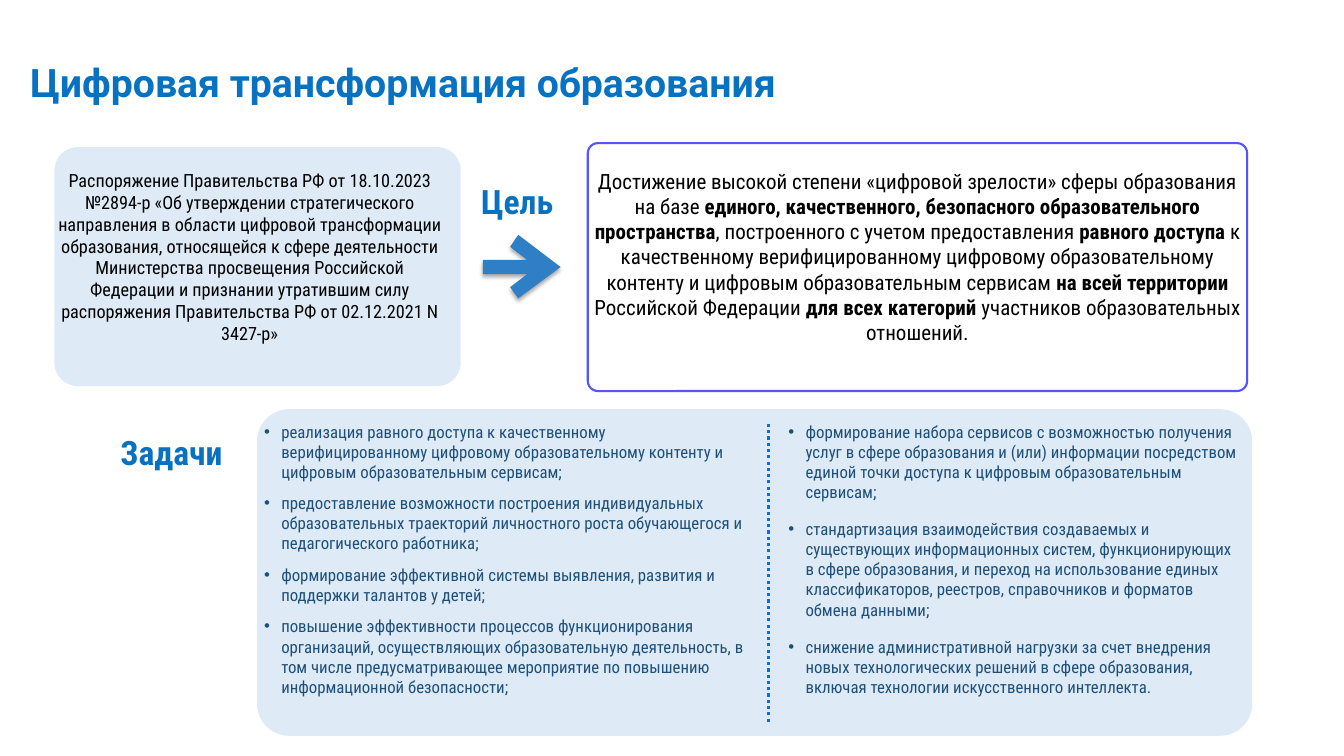
import pptx
import pptx.dml.color
import pptx.enum.dml
import pptx.enum.shapes
import pptx.enum.text
import pptx.oxml
import pptx.oxml.ns
import pptx.util
from pptx.util import Inches

COLORS = {
    "panel": "DEEBF7",
    "title": "0872C2",
    "divider": "036FE4",
    "white": "FFFFFF",
    "goal_border": "5256FC",
    "text": "000000",
    "task": "1E4F79",
    "label": "0971C0",
    "arrow": "2E7FC6",
}
NAMESPACE = pptx.oxml.ns.nsdecls("a")
ALIGN = pptx.enum.text.PP_ALIGN
rgb = pptx.dml.color.RGBColor.from_string

presentation = pptx.Presentation()
presentation.slide_width = Inches(13.33)
presentation.slide_height = Inches(7.5)
slide = presentation.slides.add_slide(presentation.slide_layouts[6])
shapes = slide.shapes


def add_panel(box, radius, fill):
    shape = shapes.add_shape(
        pptx.enum.shapes.MSO_SHAPE.ROUNDED_RECTANGLE, *map(Inches, box)
    )
    shape.adjustments[0] = radius
    shape.shadow.inherit = False
    shape.fill.solid()
    shape.fill.fore_color.rgb = rgb(COLORS[fill])
    shape.line.fill.background()
    return shape


def add_text(box, paragraphs, size, color, font="Roboto Condensed", bold=False,
             align=ALIGN.LEFT, inset=0.05, wrap=True, space=0, indent=0,
             bullet=False, anchor=pptx.enum.text.MSO_ANCHOR.TOP):
    frame = shapes.add_textbox(*map(Inches, box)).text_frame
    frame_format = {
        "word_wrap": wrap,
        "vertical_anchor": anchor,
        "auto_size": pptx.enum.text.MSO_AUTO_SIZE.SHAPE_TO_FIT_TEXT,
    }
    for side in ("left", "top", "right", "bottom"):
        frame_format[f"margin_{side}"] = Inches(inset)
    for name, value in frame_format.items():
        setattr(frame, name, value)
    run_format = {"name": font, "size": pptx.util.Pt(size)}
    for index, pieces in enumerate(paragraphs):
        paragraph = frame.add_paragraph() if index else frame.paragraphs[0]
        properties = paragraph._p.get_or_add_pPr()
        if indent:
            properties.set("marL", str(Inches(indent)))
        if bullet:
            properties.set("indent", str(Inches(-0.17)))
            for element in (
                f'<a:buClr {NAMESPACE}><a:srgbClr val="{COLORS[color]}"/></a:buClr>',
                f'<a:buFont {NAMESPACE} typeface="Arial"/>',
                f'<a:buChar {NAMESPACE} char="•"/>',
            ):
                properties.append(pptx.oxml.parse_xml(element))
        paragraph.alignment = align
        if index:
            paragraph.space_before = pptx.util.Pt(space)
        for position, piece in enumerate(pieces):
            run = paragraph.add_run()
            run.text = piece
            for name, value in run_format.items():
                setattr(run.font, name, value)
            run.font.bold = bold or position % 2 == 1
            run.font.color.rgb = rgb(COLORS[color])


add_panel((2.55, 4.06, 9.87, 3.24), 0.098, "panel")
add_text((0.3, 0.57, 10.45, 0.49), [["Цифровая трансформация образования"]],
         28, "title", font="Roboto", bold=True, inset=0,
         anchor=pptx.enum.text.MSO_ANCHOR.MIDDLE)

divider = shapes.add_connector(
    pptx.enum.shapes.MSO_CONNECTOR.STRAIGHT,
    Inches(7.62), Inches(7.16), Inches(7.62), Inches(4.2),
)
divider.line.color.rgb = rgb(COLORS["divider"])
divider.line.width = pptx.util.Pt(2.25)
divider.line.dash_style = pptx.enum.dml.MSO_LINE.ROUND_DOT
divider._element.spPr.append(pptx.oxml.parse_xml(f"<a:effectLst {NAMESPACE}/>"))

goal_panel = add_panel((5.83, 1.42, 6.54, 2.46), 0.041, "white")
goal_panel.line.color.rgb = rgb(COLORS["goal_border"])
goal_panel.line.width = pptx.util.Pt(1.5)
goal_color = goal_panel._element.spPr.find(
    pptx.oxml.ns.qn("a:solidFill")
).find(pptx.oxml.ns.qn("a:srgbClr"))
goal_color.append(pptx.oxml.parse_xml(f'<a:alpha {NAMESPACE} val="43000"/>'))

add_panel((0.54, 1.46, 4.03, 2.37), 0.098, "panel")

decree = (
    "Распоряжение Правительства РФ от 18.10.2023 №2894-р «Об утверждении "
    "стратегического направления в области цифровой трансформации образования, "
    "относящейся к сфере деятельности Министерства просвещения Российской Федерации "
    "и признании утратившим силу распоряжения Правительства РФ от 02.12.2021 N 3427-р»"
)
add_text((0.13, 1.63, 4.35, 2.49), [[decree]], 13, "text",
         align=ALIGN.CENTER, indent=0.34)

goal = [
    "Достижение высокой степени «цифровой зрелости» сферы образования на базе ",
    "единого, качественного, безопасного образовательного пространства",
    ", построенного с учетом предоставления ",
    "равного доступа ",
    "к качественному верифицированному цифровому образовательному контенту "
    "и цифровым образовательным сервисам ",
    "на всей территории ",
    "Российской Федерации ",
    "для всех категорий ",
    "участников образовательных отношений.",
]
add_text((5.78, 1.62, 6.64, 2.52), [goal], 15, "text", align=ALIGN.CENTER)

left_tasks = [
    "реализация равного доступа к качественному верифицированному цифровому "
    "образовательному контенту и цифровым образовательным сервисам;",
    "предоставление возможности построения индивидуальных образовательных "
    "траекторий личностного роста обучающегося и педагогического работника;",
    "формирование эффективной системы выявления, развития и поддержки талантов у детей;",
    "повышение эффективности процессов функционирования организаций, осуществляющих "
    "образовательную деятельность, в том числе предусматривающее мероприятие по "
    "повышению информационной безопасности;",
]
right_tasks = [
    "формирование набора сервисов с возможностью получения услуг в сфере образования "
    "и (или) информации посредством единой точки доступа к цифровым образовательным "
    "сервисам;",
    "стандартизация взаимодействия создаваемых и существующих информационных систем, "
    "функционирующих в сфере образования, и переход на использование единых "
    "классификаторов, реестров, справочников и форматов обмена данными;",
    "снижение административной нагрузки за счет внедрения новых технологических "
    "решений в сфере образования, включая технологии искусственного интеллекта.",
]
for box, tasks, space in (
    ((2.41, 4.13, 5.12, 3.46), left_tasks, 8),
    ((7.61, 4.13, 4.72, 3.16), right_tasks, 12),
):
    add_text(box, [[task] for task in tasks], 12, "task",
             space=space, indent=0.33, bullet=True)

for box, label, indent in (
    ((4.65, 1.75, 0.96, 0.5), "Цель", 0),
    ((0.64, 4.24, 1.81, 0.5), "Задачи", 0.31),
):
    add_text(box, [[label]], 24, "label", bold=True, align=ALIGN.CENTER,
             wrap=False, indent=indent)

arrow_points = [
    (5.14, 2.33), (5.06, 2.45), (5.23, 2.58), (4.79, 2.58), (4.79, 2.72),
    (5.23, 2.72), (5.06, 2.85), (5.14, 2.96), (5.56, 2.65),
]
corners = [(Inches(x), Inches(y)) for x, y in arrow_points]
builder = shapes.build_freeform(*corners[0])
builder.add_line_segments(corners[1:], close=True)
arrow = builder.convert_to_shape()
arrow.fill.solid()
arrow.fill.fore_color.rgb = rgb(COLORS["arrow"])
arrow.line.fill.background()
arrow._element.spPr.append(pptx.oxml.parse_xml(
    f'<a:effectLst {NAMESPACE}><a:outerShdw blurRad="{pptx.util.Pt(3)}" '
    f'dist="{pptx.util.Pt(1.8)}" dir="5400000" rotWithShape="0">'
    f'<a:srgbClr val="{COLORS["text"]}"><a:alpha val="35000"/></a:srgbClr>'
    "</a:outerShdw></a:effectLst>"
))

presentation.save("out.pptx")
